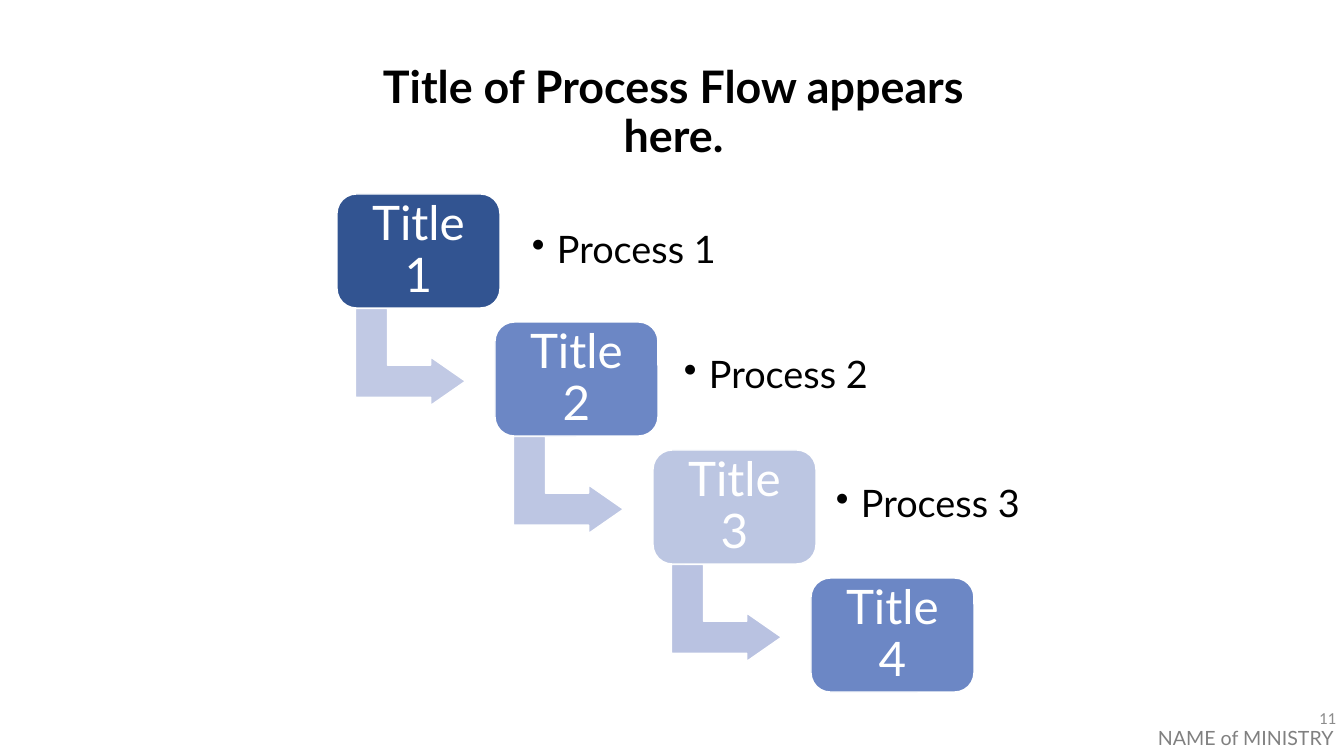
import pptx
import pptx.util
import pptx.dml.color
import pptx.enum.shapes
import pptx.enum.text
import lxml.etree

# Content: label, box colour, colour of the arrow leaving it
STEPS = [
    ("Title 1", "325491", "C1C9E4"),
    ("Title 2", "6C87C5", "BDC6E3"),
    ("Title 3", "BCC6E2", "B9C2E1"),
    ("Title 4", "6C87C5", None),
]
# Content: label, top, width
PROCESSES = [("Process 1", 205, 215), ("Process 2", 330, 317), ("Process 3", 459, 264)]
HEADING = "Title of Process Flow appears here."
MINISTRY = "NAME of MINISTRY"
PAGE = "11"

# Layout in px
BOX_X, BOX_Y, BOX_W, BOX_H = 337, 194, 163, 114
STEP_X, STEP_Y = 158, 128
ARROW_DX, ARROW_DY, ARROW_W, ARROW_H = 25, 108, 97, 110
PROCESS_X, PROCESS_STEP, PROCESS_H = 518, 152, 93
INSET, BULLET_INDENT = 14, 25

SHAPES = pptx.enum.shapes.MSO_SHAPE
ALIGN = pptx.enum.text.PP_ALIGN
ANCHOR = pptx.enum.text.MSO_ANCHOR


def px(n):
    return pptx.util.Emu(round(n * 914400 / 100.8))


def color(value):
    return pptx.dml.color.RGBColor.from_string(value)


def write(s, text, size, hue, font="Lato", bold=False, bullet=False, frame=None, para=None):
    tf = s.text_frame
    for name, value in {"word_wrap": True, **(frame or {})}.items():
        setattr(tf, name, value)
    p = tf.paragraphs[0]
    if bullet:
        pPr = p._p.get_or_add_pPr()
        pPr.set("marL", str(px(BULLET_INDENT)))
        pPr.set("indent", str(-px(BULLET_INDENT)))
        lxml.etree.SubElement(pPr, pptx.oxml.ns.qn("a:buChar")).set("char", "•")
    for name, value in (para or {}).items():
        setattr(p, name, value)
    r = p.add_run()
    r.text = text
    for name, value in {"size": pptx.util.Pt(size), "name": font, "bold": bold}.items():
        setattr(r.font, name, value)
    r.font.color.rgb = color(hue)


def add_text(x, y, w, h, *args, **kwargs):
    write(slide.shapes.add_textbox(px(x), px(y), px(w), px(h)), *args, **kwargs)


def add_block(kind, x, y, w, h, fill, adjustments):
    s = slide.shapes.add_shape(kind, px(x), px(y), px(w), px(h))
    s.shadow.inherit = False
    s.fill.solid()
    s.fill.fore_color.rgb = color(fill)
    s.line.color.rgb = color("FFFFFF")
    s.line.width = pptx.util.Pt(1)
    for i, value in enumerate(adjustments):
        s.adjustments[i] = value
    return s


prs = pptx.Presentation()
prs.slide_width, prs.slide_height = px(1344), px(756)
slide = prs.slides.add_slide(prs.slide_layouts[6])

# Footer
add_text(1148, 721, 292, 34, MINISTRY, 14, "808080")
add_text(1044, 698, 302, 40, PAGE, 12, "8C8C8C", font="Calibri",
         frame={"vertical_anchor": ANCHOR.MIDDLE}, para={"alignment": ALIGN.RIGHT})

# Staircase of boxes and arrows
padded = {"vertical_anchor": ANCHOR.MIDDLE}
padded.update({f"margin_{side}": px(INSET) for side in ("left", "right", "top", "bottom")})
for i, (label, fill, arrow_fill) in enumerate(STEPS):
    x, y = BOX_X + i * STEP_X, BOX_Y + i * STEP_Y
    if arrow_fill:
        arrow = add_block(SHAPES.BENT_UP_ARROW, x + ARROW_DX, y + ARROW_DY,
                          ARROW_W, ARROW_H, arrow_fill, [0.33, 0.25, 0.36])
        arrow.rotation = 90
    box = add_block(SHAPES.ROUNDED_RECTANGLE, x, y, BOX_W, BOX_H, fill, [0.17])
    write(box, label, 34, "FFFFFF", frame=padded,
          para={"alignment": ALIGN.CENTER, "line_spacing": 0.9})

# Process bullets
for i, (label, y, w) in enumerate(PROCESSES):
    add_text(PROCESS_X + i * PROCESS_STEP, y, w, PROCESS_H, label, 27, "000000",
             bullet=True, frame=padded, para={"line_spacing": 0.9})

# Heading
add_text(331, 60, 685, 108, HEADING, 32, "000000", bold=True,
         para={"alignment": ALIGN.CENTER, "line_spacing": 0.9})

prs.save("out.pptx")
